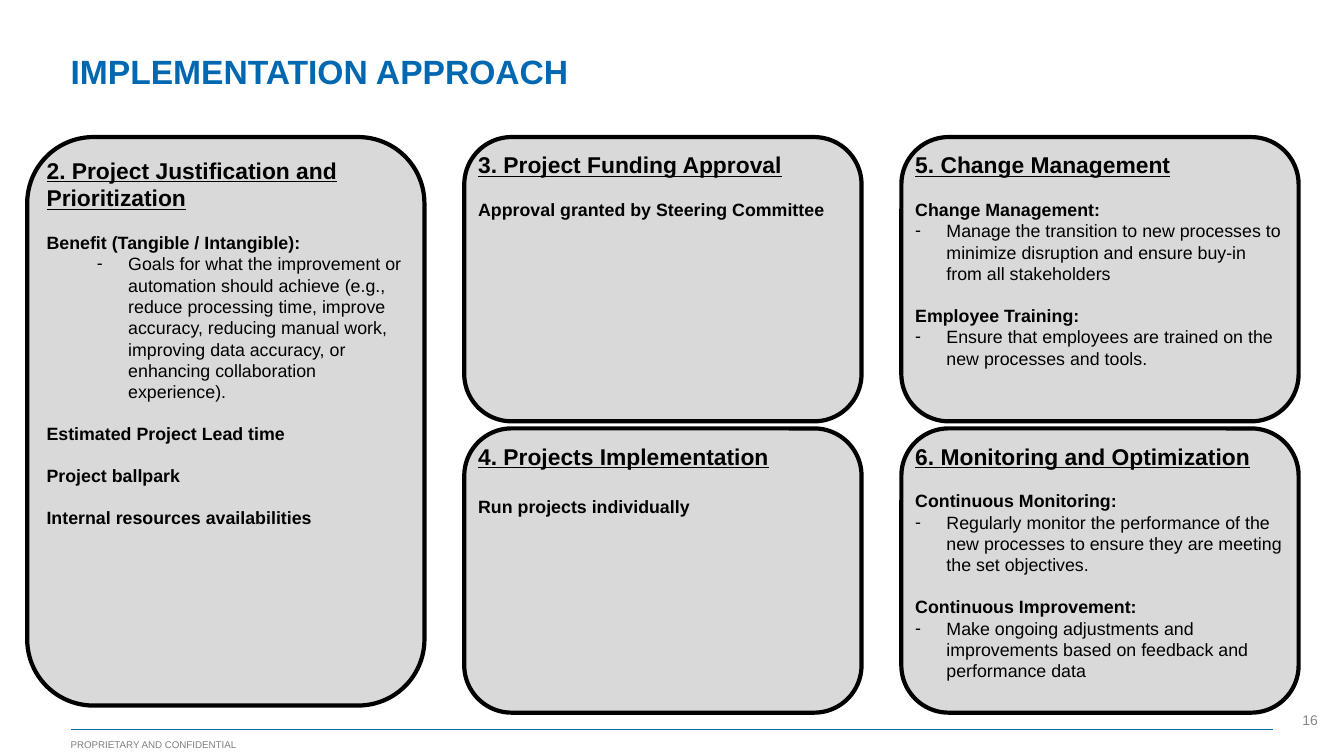
from pptx import Presentation
from pptx.dml.color import RGBColor
from pptx.enum import shapes, text
from pptx.oxml.ns import qn
from pptx.util import Inches, Pt
from lxml import etree

BLUE = RGBColor(0x00, 0x67, 0xB1)
BLACK = RGBColor(0x00, 0x00, 0x00)
PANEL = RGBColor(0xD9, 0xD9, 0xD9)
FOOTER_GREY = RGBColor(0x80, 0x80, 0x80)
NUMBER_GREY = RGBColor(0x86, 0x86, 0x86)

HEAD_SIZE, BODY_SIZE = 16.3, 12.7
LINE_GAP = 14.6  # height of one body line, in points
HANG = 0.31

# Panel grid, in inches
LEFT, TOP, PITCH_X, PITCH_Y = 0.27, 1.36, 4.335, 2.89
PANEL_W, PANEL_H, TALL_H = 3.94, 2.82, 5.64

# column, row, height, heading, gap below heading, bullet indent,
# groups of (label, bullet)
PANELS = [
    (0, 0, TALL_H, "2. Project Justification and Prioritization", LINE_GAP, 0.81, [
        ("Benefit (Tangible / Intangible):",
         "Goals for what the improvement or automation should achieve (e.g., reduce "
         "processing time, improve accuracy, reducing manual work, improving data "
         "accuracy, or enhancing collaboration experience)."),
        ("Estimated Project Lead time", None),
        ("Project ballpark", None),
        ("Internal resources availabilities", None)]),
    (1, 0, PANEL_H, "3. Project Funding Approval", LINE_GAP, HANG, [
        ("Approval granted by Steering Committee", None)]),
    (1, 1, PANEL_H, "4. Projects Implementation", 18.7, HANG, [
        ("Run projects individually", None)]),
    (2, 0, PANEL_H, "5. Change Management", LINE_GAP, HANG, [
        ("Change Management:",
         "Manage the transition to new processes to minimize disruption and ensure "
         "buy-in from all stakeholders"),
        ("Employee Training:",
         "Ensure that employees are trained on the new processes and tools.")]),
    (2, 1, PANEL_H, "6. Monitoring and Optimization", LINE_GAP, HANG, [
        ("Continuous Monitoring:",
         "Regularly monitor the performance of the new processes to ensure they are "
         "meeting the set objectives."),
        ("Continuous Improvement:",
         "Make ongoing adjustments and improvements based on feedback and "
         "performance data")]),
]


def clear_margins(tf, anchor):
    tf.margin_left = tf.margin_right = tf.margin_top = tf.margin_bottom = 0
    tf.word_wrap = True
    tf.vertical_anchor = anchor


def style(p, size, color, bold=False, underline=False):
    for r in p.runs:
        r.font.name = "Arial"
        r.font.size = Pt(size)
        r.font.color.rgb = color
        r.font.bold = bold
        r.font.underline = underline


def add_dash(p, indent):
    pPr = p._p.get_or_add_pPr()
    pPr.set("marL", str(Inches(indent)))
    pPr.set("indent", str(-Inches(HANG)))
    etree.SubElement(pPr, qn("a:buFont")).set("typeface", "Arial")
    etree.SubElement(pPr, qn("a:buChar")).set("char", "-")


def add_title(s, x, y, w, h):
    sp = s.shapes.title
    sp.left, sp.top, sp.width, sp.height = map(Inches, (x, y, w, h))
    tf = sp.text_frame
    tf.text = "IMPLEMENTATION APPROACH"
    clear_margins(tf, text.MSO_ANCHOR.MIDDLE)
    p = tf.paragraphs[0]
    p.alignment = text.PP_ALIGN.LEFT
    p.line_spacing = 0.9
    style(p, 24, BLUE, bold=True)


def add_panel(s, x, y, w, h, heading, gap, indent, groups):
    sp = s.shapes.add_shape(shapes.MSO_SHAPE.ROUNDED_RECTANGLE,
                            *map(Inches, (x, y, w, h)))
    sp.shadow.inherit = False
    sp.fill.solid()
    sp.fill.fore_color.rgb = PANEL
    sp.line.color.rgb = BLACK
    sp.line.width = Pt(3)
    tf = sp.text_frame
    clear_margins(tf, text.MSO_ANCHOR.TOP)
    tf.text = heading
    style(tf.paragraphs[0], HEAD_SIZE, BLACK, bold=True, underline=True)
    for i, (label, bullet) in enumerate(groups):
        p = tf.add_paragraph()
        p.text = label
        p.space_before = Pt(LINE_GAP if i else gap)
        style(p, BODY_SIZE, BLACK, bold=True)
        if bullet:
            p = tf.add_paragraph()
            p.text = bullet
            add_dash(p, indent)
            style(p, BODY_SIZE, BLACK)
    for p in tf.paragraphs:
        p.alignment = text.PP_ALIGN.LEFT


def add_label(s, x, y, w, h, words, size, color, align):
    tf = s.shapes.add_textbox(*map(Inches, (x, y, w, h))).text_frame
    clear_margins(tf, text.MSO_ANCHOR.BOTTOM)
    tf.text = words
    tf.paragraphs[0].alignment = align
    style(tf.paragraphs[0], size, color)


def add_footer(s, x, y, w):
    rule = s.shapes.add_connector(shapes.MSO_CONNECTOR.STRAIGHT,
                                  *map(Inches, (x, y, x + w, y)))
    rule.line.color.rgb = BLUE
    rule.line.width = Pt(1)
    etree.SubElement(rule._element.spPr, qn("a:effectLst"))
    add_label(s, x, y + 0.08, 1.82, 0.12, "PROPRIETARY AND CONFIDENTIAL",
              7, FOOTER_GREY, text.PP_ALIGN.LEFT)
    add_label(s, x + w + 0.17, y - 0.16, 0.27, 0.15, "16",
              10, NUMBER_GREY, text.PP_ALIGN.RIGHT)


def main():
    prs = Presentation()
    prs.slide_width, prs.slide_height = Inches(13.33), Inches(7.5)
    s = prs.slides.add_slide(prs.slide_layouts[5])
    # Footer rule, notice and page number
    add_footer(s, 0.7, 7.24, 11.93)
    # Title
    add_title(s, 0.7, 0.35, 10.02, 0.76)
    # Numbered step panels
    for col, row, h, *content in PANELS:
        add_panel(s, LEFT + col * PITCH_X, TOP + row * PITCH_Y, PANEL_W, h, *content)
    prs.save("out.pptx")


if __name__ == "__main__":
    main()
